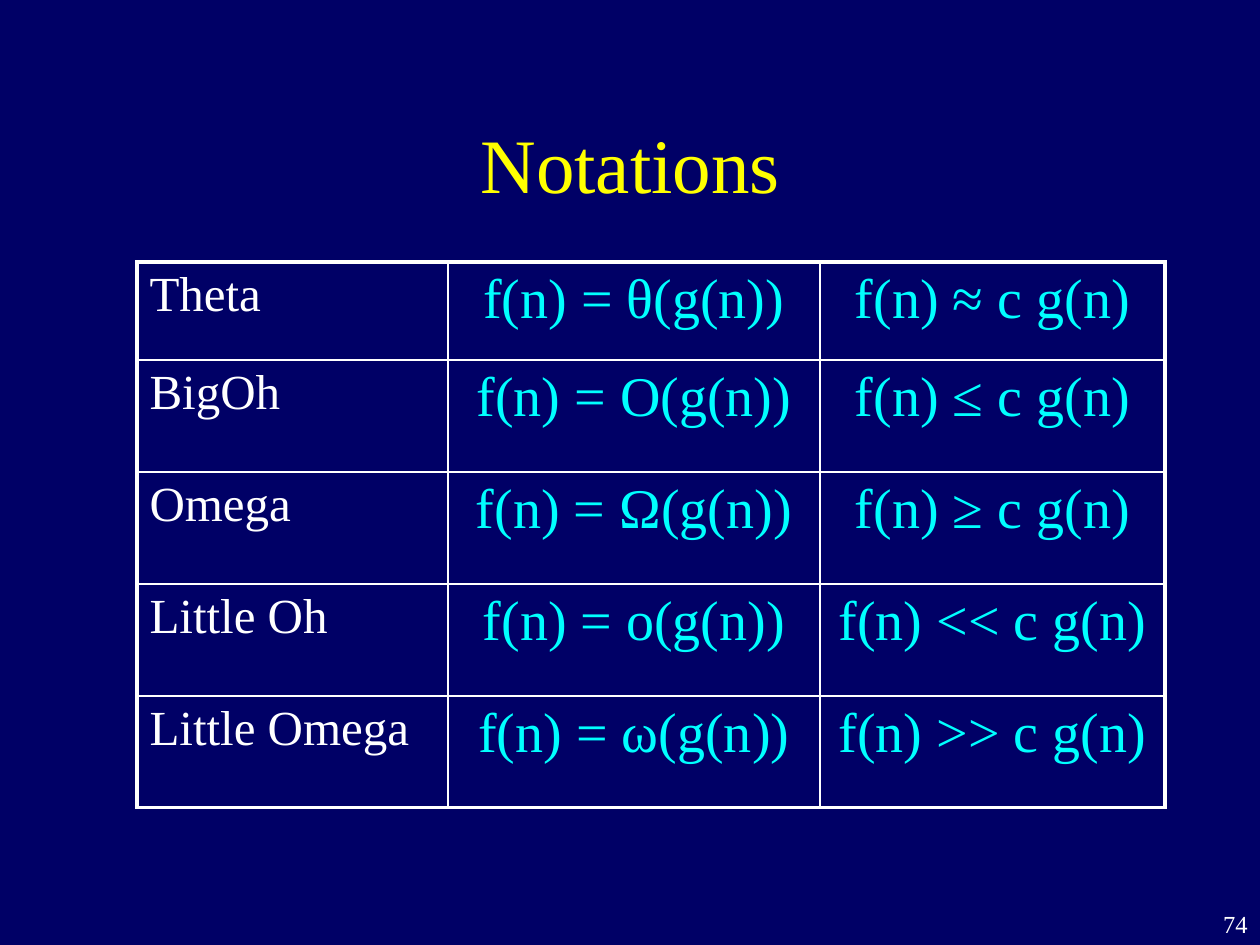
"""Build the slide that lists the asymptotic notations in a table."""
from lxml import etree
from pptx import Presentation
from pptx import util as u
from pptx.dml.color import RGBColor
from pptx.enum import text
from pptx.oxml import ns

NAVY = RGBColor(0x00, 0x00, 0x66)
WHITE = RGBColor(0xFF, 0xFF, 0xFF)
YELLOW = RGBColor(0xFF, 0xFF, 0x00)
CYAN = RGBColor(0x00, 0xFF, 0xFF)
FONT = "Times New Roman"
PX = u.Inches(1) // 126
LEFT, CENTER, RIGHT = text.PP_ALIGN.LEFT, text.PP_ALIGN.CENTER, text.PP_ALIGN.RIGHT

TITLE = "Notations"
PAGE_NUMBER = "74"
NOTATIONS = [
    ("Theta", "f(n) = θ(g(n))", "f(n) ≈ c g(n)"),
    ("BigOh", "f(n) = O(g(n))", "f(n) ≤ c g(n)"),
    ("Omega", "f(n) = Ω(g(n))", "f(n) ≥ c g(n)"),
    ("Little Oh", "f(n) = o(g(n))", "f(n) << c g(n)"),
    ("Little Omega", "f(n) = ω(g(n))", "f(n) >> c g(n)"),
]
COLUMN_STYLES = [(LEFT, 28, WHITE), (CENTER, 32, CYAN), (CENTER, 32, CYAN)]
COLUMN_WIDTHS = [311, 372, 345]
ROW_HEIGHTS = [98, 112, 112, 112, 112]
TABLE_LEFT, TABLE_TOP = 137, 262
OUTER_LINE, INNER_LINE = 2.25, 1


def write(frame, words, align, size, color):
    para = frame.paragraphs[0]
    para.alignment = align
    span = para.add_run()
    span.text = words
    span.font.name = FONT
    span.font.size = u.Pt(size)
    span.font.color.rgb = color


def add_text(page, place, words, align, size, color):
    box = page.shapes.add_textbox(*(side * PX for side in place))
    box.text_frame.word_wrap = True
    box.text_frame.vertical_anchor = text.MSO_ANCHOR.MIDDLE
    write(box.text_frame, words, align, size, color)


def add_border(cell, side, points):
    properties = cell._tc.get_or_add_tcPr()
    line = etree.SubElement(properties, ns.qn(f"a:ln{side}"), w=str(u.Pt(points)))
    fill = etree.SubElement(line, ns.qn("a:solidFill"))
    etree.SubElement(fill, ns.qn("a:srgbClr"), val=str(WHITE))


def add_notation_table(page):
    last_row, last_column = len(ROW_HEIGHTS) - 1, len(COLUMN_WIDTHS) - 1
    place = (TABLE_LEFT, TABLE_TOP, sum(COLUMN_WIDTHS), sum(ROW_HEIGHTS))
    table = page.shapes.add_table(
        len(ROW_HEIGHTS), len(COLUMN_WIDTHS), *(side * PX for side in place)
    ).table
    table.first_row = table.horz_banding = False
    for column, width in zip(table.columns, COLUMN_WIDTHS):
        column.width = width * PX
    for r, (height, words) in enumerate(zip(ROW_HEIGHTS, NOTATIONS)):
        table.rows[r].height = height * PX
        for c, (word, style) in enumerate(zip(words, COLUMN_STYLES)):
            cell = table.cell(r, c)
            write(cell.text_frame, word, *style)
            outer_sides = {"L": c == 0, "R": c == last_column, "T": r == 0, "B": r == last_row}
            for side, is_outer in outer_sides.items():
                add_border(cell, side, OUTER_LINE if is_outer else INNER_LINE)
            cell.fill.background()


def main():
    deck = Presentation()
    deck.slide_width, deck.slide_height = 1260 * PX, 945 * PX
    page = deck.slides.add_slide(deck.slide_layouts[6])
    page.background.fill.solid()
    page.background.fill.fore_color.rgb = NAVY
    add_text(page, (1197, 903, 63, 42), PAGE_NUMBER, RIGHT, 14, WHITE)
    add_text(page, (95, 84, 1071, 158), TITLE, CENTER, 44, YELLOW)
    add_notation_table(page)
    deck.save("out.pptx")


if __name__ == "__main__":
    main()
